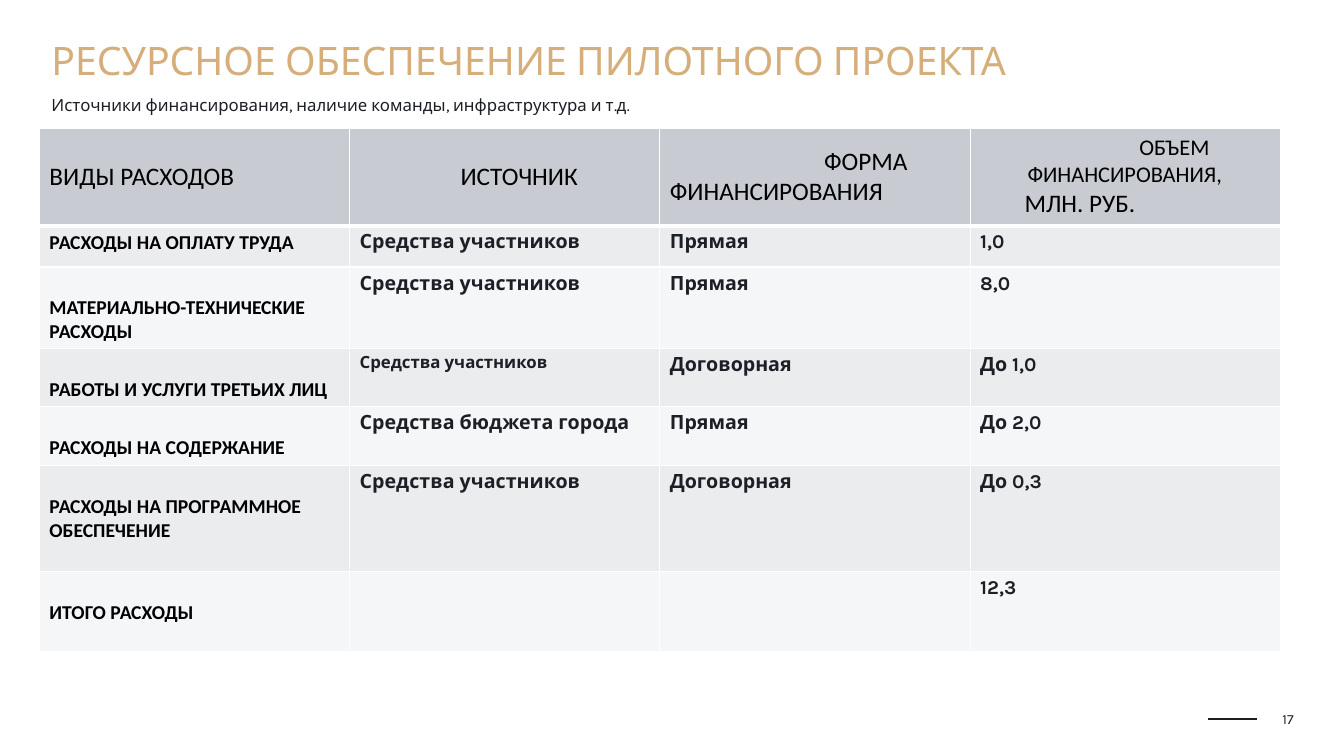
from lxml import etree
from pptx import Presentation
from pptx.dml.color import RGBColor
from pptx.enum.shapes import MSO_CONNECTOR
from pptx.enum.text import MSO_ANCHOR, PP_ALIGN
from pptx.oxml.ns import qn
from pptx.util import Inches, Pt

STRAIGHT = MSO_CONNECTOR.STRAIGHT
TOP, MIDDLE, BOTTOM = MSO_ANCHOR.TOP, MSO_ANCHOR.MIDDLE, MSO_ANCHOR.BOTTOM
LEFT, RIGHT = PP_ALIGN.LEFT, PP_ALIGN.RIGHT

SLIDE_WIDTH, SLIDE_HEIGHT = 13.33, 7.5
GOLD, INK, BLACK, WHITE = "D6AE7B", "1C1F26", "000000", "FFFFFF"
HEADER_FILL, BAND_FILLS = "C8CBD2", ("EBECEE", "F5F6F7")
BODY_FONT, LABEL_FONT = "Karla", "Calibri"
CELL_MARGIN, LABEL_DROP = 0.1, 0.24

HEADERS = [
    [("ВИДЫ РАСХОДОВ", 18, 0, 0)],
    [("ИСТОЧНИК", 18, 1, 0)],
    [("ФОРМА ФИНАНСИРОВАНИЯ", 18, 0, 1.53)],
    [("ОБЪЕМ ФИНАНСИРОВАНИЯ,", 16, 0.47, 1.11), ("МЛН. РУБ.", 18, 0.44, 0)],
]
HEADER_HEIGHT = 0.97
EXPENSES = [
    (0.41, 0, "РАСХОДЫ НА ОПЛАТУ ТРУДА", "Средства участников", "Прямая", "1,0"),
    (0.8, LABEL_DROP, "МАТЕРИАЛЬНО-ТЕХНИЧЕСКИЕ РАСХОДЫ", "Средства участников", "Прямая", "8,0"),
    (0.58, LABEL_DROP, "РАБОТЫ И УСЛУГИ ТРЕТЬИХ ЛИЦ", "Средства участников", "Договорная", "До 1,0"),
    (0.58, LABEL_DROP, "РАСХОДЫ НА СОДЕРЖАНИЕ", "Средства бюджета города", "Прямая", "До 2,0"),
    (1.05, LABEL_DROP, "РАСХОДЫ НА ПРОГРАММНОЕ ОБЕСПЕЧЕНИЕ", "Средства участников", "Договорная", "До 0,3"),
    (0.8, LABEL_DROP, "ИТОГО РАСХОДЫ", "", "", "12,3"),
]
SMALL_CELL = (3, 1)


def color(value):
    """Turn a hex string into a colour."""
    return RGBColor.from_string(value)


def format_font(font, size, name, tint, bold=False):
    """Set the look of a font."""
    font.size, font.name, font.bold = Pt(size), name, bold
    font.color.rgb = color(tint)


def add_text(slide, box, text, size, tint, anchor=TOP, align=LEFT, wrap=True, spacing=0.9):
    """Place one line of text without insets in a box."""
    frame = slide.shapes.add_textbox(*map(Inches, box)).text_frame
    frame.margin_left = frame.margin_right = frame.margin_top = frame.margin_bottom = 0
    frame.word_wrap, frame.vertical_anchor = wrap, anchor
    frame.text = text
    paragraph = frame.paragraphs[0]
    paragraph.alignment, paragraph.line_spacing = align, spacing
    format_font(paragraph.runs[0].font, size, BODY_FONT, tint)


def style_cell(cell, fill, bottom_width=1):
    """Draw white borders around a cell and fill it."""
    properties = cell._tc.get_or_add_tcPr()
    for side, width in (("L", 1), ("R", 1), ("T", 1), ("B", bottom_width)):
        line = etree.SubElement(properties, qn(f"a:ln{side}"), w=str(Pt(width)))
        solid = etree.SubElement(line, qn("a:solidFill"))
        etree.SubElement(solid, qn("a:srgbClr"), val=WHITE)
    cell.fill.solid()
    cell.fill.fore_color.rgb = color(fill)


def fill_header(cell, lines):
    """Write a header cell whose lines carry their own indents."""
    style_cell(cell, HEADER_FILL, bottom_width=3)
    cell.vertical_anchor = MIDDLE
    cell.text = "\n".join(line[0] for line in lines)
    for paragraph, (_, size, margin, indent) in zip(cell.text_frame.paragraphs, lines):
        properties = paragraph._p.get_or_add_pPr()
        properties.set("marL", str(Inches(margin)))
        properties.set("indent", str(Inches(indent)))
        format_font(paragraph.runs[0].font, size, LABEL_FONT, BLACK)


def add_expense_table(slide, box):
    """Build the expense table in a box."""
    left, top, width, height = box
    columns = len(HEADERS)
    table = slide.shapes.add_table(len(EXPENSES) + 1, columns, *map(Inches, box)).table
    for column, lines in enumerate(HEADERS):
        table.columns[column].width = Inches(width / columns)
        fill_header(table.cell(0, column), lines)
    table.rows[0].height = Inches(HEADER_HEIGHT)
    for row, (row_height, drop, *texts) in enumerate(EXPENSES, 1):
        table.rows[row].height = Inches(row_height)
        for column, text in enumerate(texts):
            cell = table.cell(row, column)
            style_cell(cell, BAND_FILLS[(row - 1) % 2])
            cell.text = text
            name, tint = (BODY_FONT, INK) if column else (LABEL_FONT, BLACK)
            if column == 0:
                cell.margin_top = Inches(0.05 + drop)
            size = 12 if (row, column) == SMALL_CELL else 14
            paragraph = cell.text_frame.paragraphs[0]
            format_font(paragraph.font, size, name, tint, bold=True)
            for run in paragraph.runs:
                format_font(run.font, size, name, tint, bold=True)


def add_heading(slide, box):
    """Write the title and the subtitle at the top and bottom of a box."""
    left, top, width, height = box
    add_text(slide, (left, top, width, 0.42), "РЕСУРСНОЕ ОБЕСПЕЧЕНИЕ ПИЛОТНОГО ПРОЕКТА", 28, GOLD)
    add_text(slide, (left, top + height - 0.18, width, 0.18),
             "Источники финансирования, наличие команды, инфраструктура и т.д.", 12, INK, BOTTOM)


def add_footer(slide, box):
    """Draw the dash and the page number in a box."""
    left, top, width, height = box
    middle = top + height / 2
    dash = slide.shapes.add_connector(
        STRAIGHT, *map(Inches, (left, middle, left + 0.49, middle)))
    dash.line.color.rgb = color(INK)
    dash.line.width = Pt(1)
    etree.SubElement(dash._element.spPr, qn("a:effectLst"))
    add_text(slide, (left + width - 0.18, top, 0.18, height), "17", 10, INK,
             MIDDLE, RIGHT, wrap=False, spacing=1)


def main():
    """Build and save the presentation."""
    presentation = Presentation()
    presentation.slide_width = Inches(SLIDE_WIDTH)
    presentation.slide_height = Inches(SLIDE_HEIGHT)
    slide = presentation.slides.add_slide(presentation.slide_layouts[6])
    add_footer(slide, (11.98, 7.05, 0.85, 0.17))
    table_height = HEADER_HEIGHT + sum(expense[0] for expense in EXPENSES)
    add_expense_table(slide, (0.39, 1.27, 12.31, table_height))
    add_heading(slide, (0.51, 0.41, 12.31, 0.73))
    presentation.save("out.pptx")


if __name__ == "__main__":
    main()
